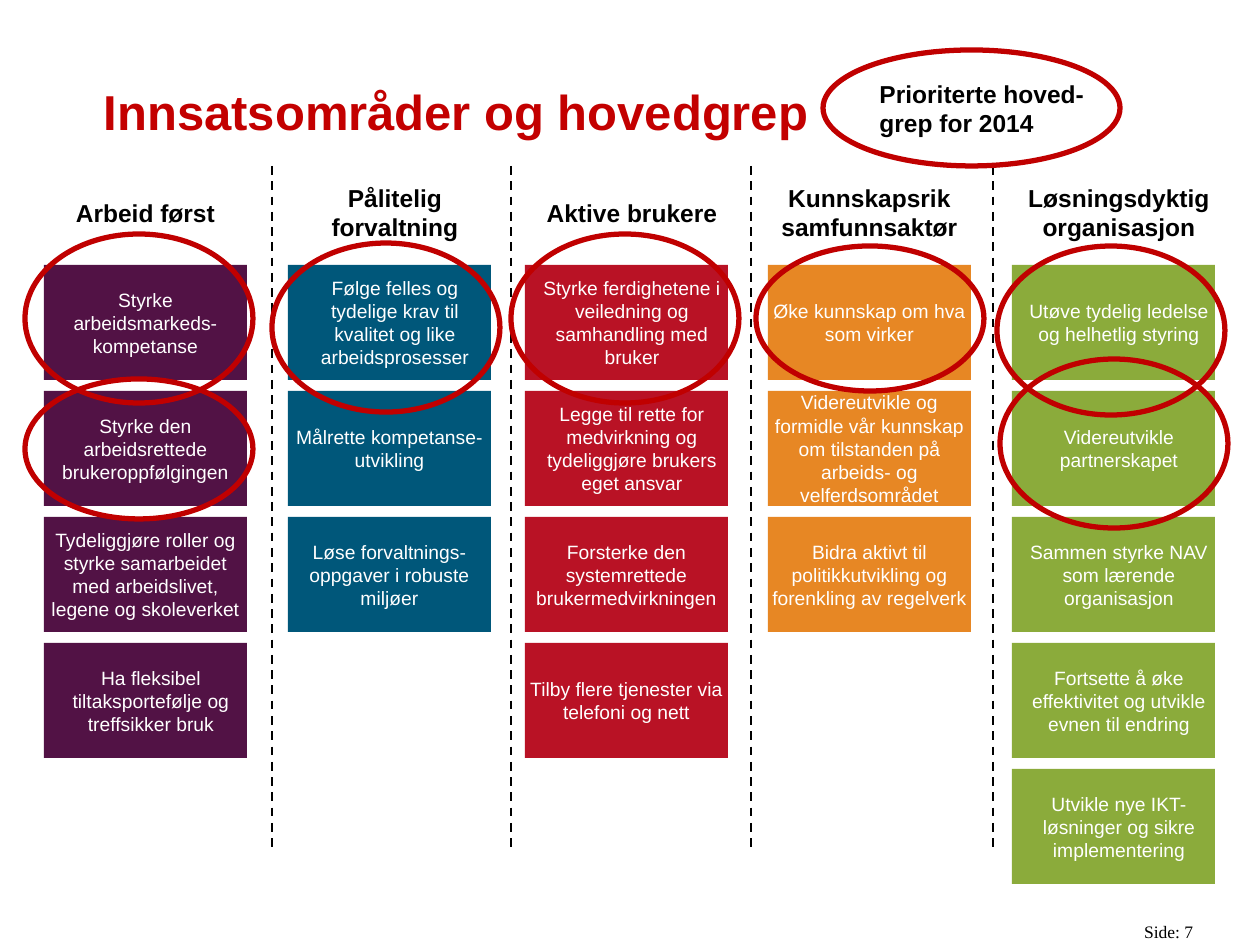
from lxml import etree
from pptx import Presentation
from pptx.dml.color import RGBColor
from pptx.enum.dml import MSO_LINE
from pptx.enum.shapes import MSO_CONNECTOR, MSO_SHAPE
from pptx.enum.text import MSO_ANCHOR, PP_ALIGN
from pptx.oxml.ns import qn
from pptx.util import Emu, Pt

PX = 914400 / 126
WHITE = RGBColor(0xFF, 0xFF, 0xFF)
BLACK = RGBColor(0x00, 0x00, 0x00)
TITLE_RED = RGBColor(0xC3, 0x00, 0x00)
RING_RED = RGBColor(0xC0, 0x00, 0x00)
PURPLE = RGBColor(0x52, 0x12, 0x45)
BLUE = RGBColor(0x00, 0x57, 0x7A)
RED = RGBColor(0xB9, 0x12, 0x25)
ORANGE = RGBColor(0xE7, 0x87, 0x24)
GREEN = RGBColor(0x8B, 0xAB, 0x3B)
RECTANGLE, OVAL = MSO_SHAPE.RECTANGLE, MSO_SHAPE.OVAL
STRAIGHT, DASH = MSO_CONNECTOR.STRAIGHT, MSO_LINE.DASH
LEFT, CENTER, RIGHT = PP_ALIGN.LEFT, PP_ALIGN.CENTER, PP_ALIGN.RIGHT
TOP, MIDDLE, BOTTOM = MSO_ANCHOR.TOP, MSO_ANCHOR.MIDDLE, MSO_ANCHOR.BOTTOM

CARD_WIDTH, CARD_HEIGHT, CARD_STEP = 203, 115, 126
HEADING_RISE = 110
COLUMN_TOP = 265
INDENT = 11

# Each heading and card: wording, and whether it has the left indent.
COLUMNS = [
    (44, PURPLE, ("Arbeid først", False), [
        ("Styrke arbeidsmarkeds-kompetanse", False),
        ("Styrke den arbeidsrettede brukeroppfølgingen", False),
        ("Tydeliggjøre roller og styrke samarbeidet med arbeidslivet, "
         "legene og skoleverket", False),
        ("Ha fleksibel tiltaksportefølje og treffsikker bruk", True)]),
    (288, BLUE, ("Pålitelig forvaltning", True), [
        ("Følge felles og tydelige krav til kvalitet og like "
         "arbeidsprosesser", True),
        ("Målrette kompetanse-utvikling", False),
        ("Løse forvaltnings-oppgaver i robuste miljøer", False)]),
    (525, RED, ("Aktive brukere", True), [
        ("Styrke ferdighetene i veiledning og samhandling med bruker", True),
        ("Legge til rette for medvirkning og tydeliggjøre brukers "
         "eget ansvar", True),
        ("Forsterke den systemrettede brukermedvirkningen", False),
        ("Tilby flere tjenester via telefoni og nett", False)]),
    (768, ORANGE, ("Kunnskapsrik samfunnsaktør", False), [
        ("Øke kunnskap om hva som virker", False),
        ("Videreutvikle og formidle vår kunnskap om tilstanden på "
         "arbeids- og velferdsområdet", False),
        ("Bidra aktivt til politikkutvikling og forenkling av regelverk",
         False)]),
    (1012, GREEN, ("Løsningsdyktig organisasjon", True), [
        ("Utøve tydelig ledelse og helhetlig styring", True),
        ("Videreutvikle partnerskapet", True),
        ("Sammen styrke NAV som lærende organisasjon", True),
        ("Fortsette å øke effektivitet og utvikle evnen til endring", True),
        ("Utvikle nye IKT-løsninger og sikre implementering", True)]),
]
DIVIDERS = [272, 511, 751, 993]
RINGS = [
    (25, 234, 228, 169), (272, 243, 228, 169), (511, 234, 228, 169),
    (997, 246, 228, 169), (1000, 359, 228, 169), (25, 379, 228, 140),
    (756, 246, 228, 145),
]


def px(length):
    return Emu(round(length * PX))


def place(box):
    return [px(length) for length in box]


def write(shape, text, size, color, align=CENTER, anchor=MIDDLE, bold=False,
          font="Arial", insets=(3, 5, 3, 5), indent=0, wrap=True):
    frame = shape.text_frame
    frame.text = text
    frame.word_wrap = wrap
    frame.vertical_anchor = anchor
    (frame.margin_left, frame.margin_top,
     frame.margin_right, frame.margin_bottom) = place(insets)
    for para in frame.paragraphs:
        para.alignment = align
        if indent:
            properties = para._p.get_or_add_pPr()
            properties.set("marL", str(px(indent)))
            properties.set("indent", "0")
        for span in para.runs:
            span.font.name = font
            span.font.size = Pt(size)
            span.font.bold = bold
            span.font.color.rgb = color


def add_column(page, left, top, color, heading, cards):
    text, indented = heading
    heading_box = page.shapes.add_textbox(
        *place((left, top - HEADING_RISE, CARD_WIDTH, CARD_HEIGHT)))
    write(heading_box, text, 14, BLACK, bold=True, indent=INDENT * indented)
    for row, (text, indented) in enumerate(cards):
        card = page.shapes.add_shape(RECTANGLE, *place(
            (left, top + row * CARD_STEP, CARD_WIDTH, CARD_HEIGHT)))
        card.shadow.inherit = False
        card.fill.solid()
        card.fill.fore_color.rgb = color
        card.line.fill.background()
        write(card, text, 11, WHITE, indent=INDENT * indented)


def add_divider(page, x, top, bottom):
    divider = page.shapes.add_connector(STRAIGHT, *place((x, top, x, bottom)))
    divider.line.color.rgb = BLACK
    divider.line.width = Pt(1.25)
    divider.line.dash_style = DASH
    etree.SubElement(divider._element.spPr, qn("a:effectLst"))


def add_ring(page, box):
    ring = page.shapes.add_shape(OVAL, *place(box))
    ring.shadow.inherit = False
    ring.fill.background()
    ring.line.color.rgb = RING_RED
    ring.line.width = Pt(3)
    return ring


def add_title(page, box):
    title = page.shapes.add_textbox(*place(box))
    write(title, "Innsatsområder og hovedgrep", 28, TITLE_RED, LEFT, BOTTOM,
          bold=True, insets=(13, 6, 13, 60))
    title.text_frame.paragraphs[0].line_spacing = Pt(31)


def add_legend(page, box):
    write(add_ring(page, box), "Prioriterte hoved-\ngrep for 2014", 14, BLACK,
          LEFT, bold=True, insets=(13, 6, 13, 6), wrap=False)


def add_page_number(page, box):
    write(page.shapes.add_textbox(*place(box)), "Side: 7", 10, BLACK, RIGHT,
          TOP, font="Times New Roman", insets=(13, 6, 13, 6))


def main():
    deck = Presentation()
    deck.slide_width, deck.slide_height = px(1260), px(945)
    page = deck.slides.add_slide(deck.slide_layouts[6])
    add_page_number(page, (924, 915, 282, 34))
    for left, color, heading, cards in COLUMNS:
        add_column(page, left, COLUMN_TOP, color, heading, cards)
    for x in DIVIDERS:
        add_divider(page, x, 166, 852)
    add_title(page, (91, 48, 1169, 147))
    for box in RINGS:
        add_ring(page, box)
    add_legend(page, (823, 50, 297, 116))
    deck.save("out.pptx")


if __name__ == "__main__":
    main()
